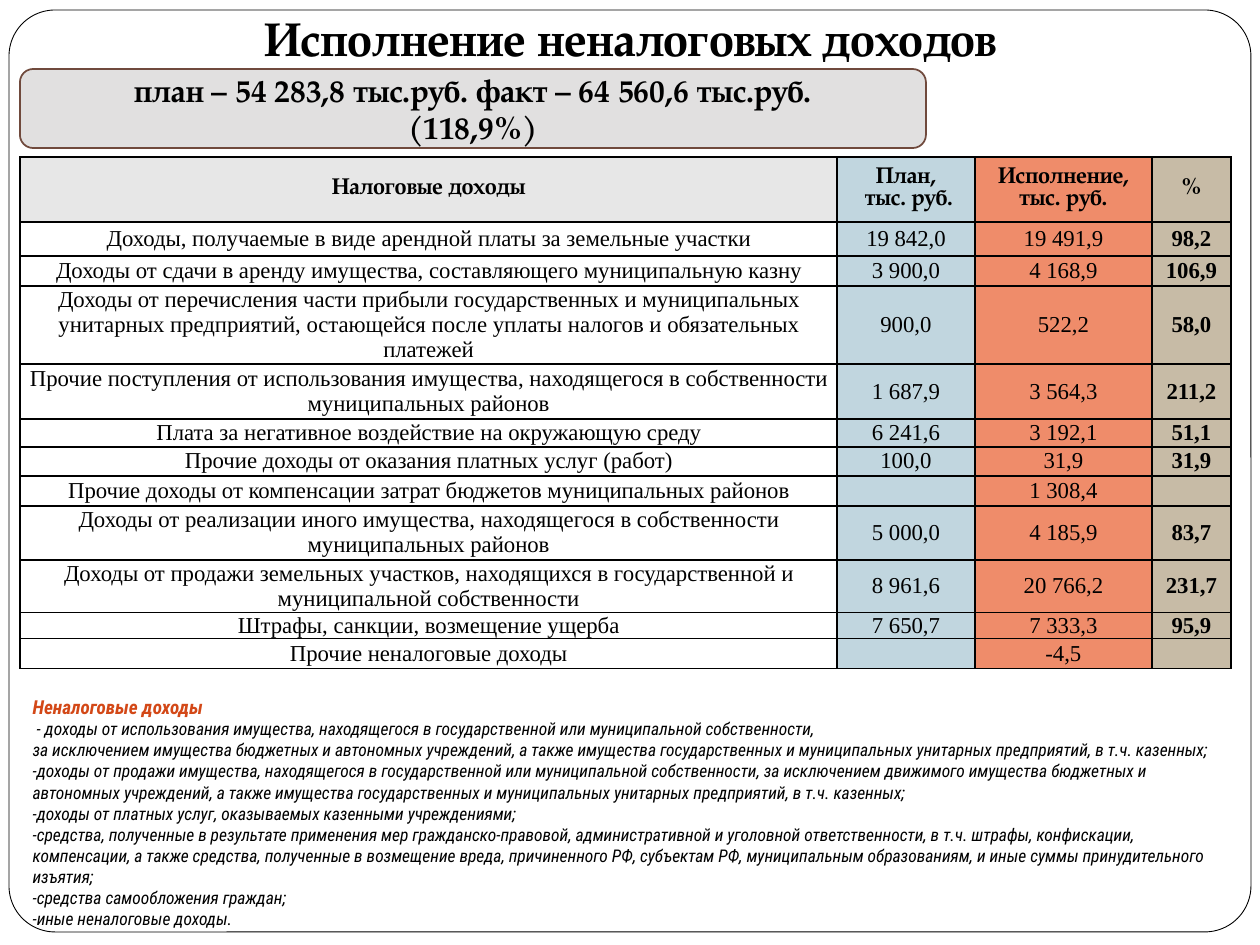
from dataclasses import dataclass

from lxml.etree import SubElement
from pptx import Presentation
from pptx.dml.color import RGBColor
from pptx.enum.shapes import MSO_SHAPE as Shape
from pptx.enum.text import MSO_ANCHOR as Anchor, MSO_AUTO_SIZE as AutoSize, PP_ALIGN as Align
from pptx.oxml.ns import qn
from pptx.util import Emu, Pt

EMU_PER_PX = 914400 / 126


def px(n):
    return Emu(round(n * EMU_PER_PX))


@dataclass(frozen=True)
class Theme:
    heading_font: str = "TeX Gyre Pagella"
    table_font: str = "Times New Roman"
    list_font: str = "Roboto Condensed"
    black: str = "000000"
    white: str = "FFFFFF"
    accent: str = "D34817"
    banner_fill: str = "E1E0E0"
    banner_line: str = "704A3D"
    header_fill: str = "E7E7E7"
    column_fills: tuple = ("FFFFFF", "C1D6DF", "EF8C6A", "C7BBA6")
    title_size: float = 27
    banner_size: float = 18
    table_size: float = 13
    list_heading_size: float = 11
    list_size: float = 10


class SlideBuilder:
    def __init__(self, prs, theme):
        self.theme = theme
        self.slide = prs.slides.add_slide(prs.slide_layouts[1])

    def place(self, sp, box):
        sp.left, sp.top, sp.width, sp.height = map(px, box)

    def style(self, p, font, size, color=None, bold=False, italic=False, align=Align.CENTER):
        p.alignment = align
        f = p.font
        f.name, f.size, f.bold, f.italic = font, Pt(size), bold, italic
        f.color.rgb = RGBColor.from_string(color or self.theme.black)

    def rounded(self, box, fill, line, width, radius=None):
        sp = self.slide.shapes.add_shape(Shape.ROUNDED_RECTANGLE, *map(px, box))
        sp.shadow.inherit = False
        sp.fill.solid()
        sp.fill.fore_color.rgb = RGBColor.from_string(fill)
        sp.line.color.rgb = RGBColor.from_string(line)
        sp.line.width = Pt(width)
        if radius is not None:
            sp.adjustments[0] = radius
        return sp

    def frame(self, box):
        sp = self.rounded(box, self.theme.white, self.theme.black, 0.5, 0.05)
        self.slide.shapes._spTree.insert(2, sp._element)  # behind everything

    def title(self, box, text):
        sp = self.slide.shapes.title
        self.place(sp, box)
        tf = sp.text_frame
        tf.text = text
        tf.auto_size, tf.vertical_anchor = AutoSize.NONE, Anchor.BOTTOM
        tf.margin_bottom = px(13)
        self.style(tf.paragraphs[0], self.theme.heading_font, self.theme.title_size, bold=True)

    def banner(self, box, text):
        sp = self.rounded(box, self.theme.banner_fill, self.theme.banner_line, 1)
        tf = sp.text_frame
        tf.text = text
        tf.word_wrap, tf.vertical_anchor = True, Anchor.MIDDLE
        for p in tf.paragraphs:
            self.style(p, self.theme.heading_font, self.theme.banner_size, bold=True)

    def cell_borders(self, cell):
        tc_pr = cell._tc.get_or_add_tcPr()
        for side in ("a:lnL", "a:lnR", "a:lnT", "a:lnB"):
            ln = SubElement(tc_pr, qn(side), w=str(Pt(1)))
            fill = SubElement(ln, qn("a:solidFill"))
            SubElement(fill, qn("a:srgbClr"), val=self.theme.black)

    def cell(self, cell, text, fill, font, bold, margins):
        cell.text = text
        cell.vertical_anchor = Anchor.MIDDLE
        cell.margin_left = cell.margin_right = px(margins[0])
        cell.margin_top = cell.margin_bottom = px(margins[1])
        self.cell_borders(cell)
        cell.fill.solid()
        cell.fill.fore_color.rgb = RGBColor.from_string(fill)
        for p in cell.text_frame.paragraphs:
            self.style(p, font, self.theme.table_size, bold=bold)
            if not text:  # keeps empty cells from stretching the row
                p._p.get_or_add_endParaRPr().set("sz", str(round(self.theme.table_size * 100)))

    def table(self, left, top, widths, heights, header, rows):
        t = self.theme
        box = (left, top, sum(widths), sum(heights))
        table = self.slide.shapes.add_table(len(heights), len(widths), *map(px, box)).table
        table.first_row = table.horz_banding = False
        for column, w in zip(table.columns, widths):
            column.width = px(w)
        for row, h in zip(table.rows, heights):
            row.height = px(h)
        header_fills = (t.header_fill, *t.column_fills[1:])
        for c, (text, fill) in enumerate(zip(header, header_fills)):
            self.cell(table.cell(0, c), text, fill, t.heading_font, True, (12, 4))
        last = len(widths) - 1
        for r, row in enumerate(rows, 1):
            for c, (text, fill) in enumerate(zip(row, t.column_fills)):
                self.cell(table.cell(r, c), text, fill, t.table_font, c == last, (1, 0))

    def text_list(self, box, heading, items):
        t = self.theme
        sp = self.slide.placeholders[1]
        self.place(sp, box)
        tf = sp.text_frame
        tf.text = "\n".join([heading, *items])
        tf.auto_size, tf.vertical_anchor = AutoSize.NONE, Anchor.TOP
        for i, p in enumerate(tf.paragraphs):
            size, color = (t.list_size, t.black) if i else (t.list_heading_size, t.accent)
            p.space_before = Pt(0)
            self.style(p, t.list_font, size, color, i == 0, True, Align.LEFT)
            p_pr = p._p.get_or_add_pPr()
            p_pr.set("marL", "0")
            p_pr.set("indent", "0")
            p_pr.insert(1, p_pr.makeelement(qn("a:buNone")))  # after spacing, before font


HEADER = ("Налоговые доходы", "План,\n тыс. руб.", "Исполнение, тыс. руб.", "%")
ROWS = [
    ("Доходы, получаемые в виде арендной платы за земельные участки",
     "19 842,0", "19 491,9", "98,2"),
    ("Доходы от сдачи в аренду имущества, составляющего муниципальную казну",
     "3 900,0", "4 168,9", "106,9"),
    ("Доходы от перечисления части прибыли государственных и муниципальных унитарных "
     "предприятий, остающейся после уплаты налогов и обязательных платежей",
     "900,0", "522,2", "58,0"),
    ("Прочие поступления от использования имущества, находящегося в собственности "
     "муниципальных районов", "1 687,9", "3 564,3", "211,2"),
    ("Плата за негативное воздействие на окружающую среду", "6 241,6", "3 192,1", "51,1"),
    ("Прочие доходы от оказания платных услуг (работ)", "100,0", "31,9", "31,9"),
    ("Прочие доходы от компенсации затрат бюджетов муниципальных районов", "", "1 308,4", ""),
    ("Доходы от реализации иного имущества, находящегося в собственности "
     "муниципальных районов", "5 000,0", "4 185,9", "83,7"),
    ("Доходы от продажи земельных участков, находящихся в государственной и "
     "муниципальной собственности", "8 961,6", "20 766,2", "231,7"),
    ("Штрафы, санкции, возмещение ущерба", "7 650,7", "7 333,3", "95,9"),
    ("Прочие неналоговые доходы", "", "-4,5", ""),
]
COLUMN_WIDTHS = (817, 138, 177, 79)
ROW_HEIGHTS = (65, 34, 30, 78, 55, 28, 29, 30, 54, 53, 26, 30)
DEFINITIONS = [
    " - доходы от использования имущества, находящегося в государственной или "
    "муниципальной собственности,",
    "за исключением имущества бюджетных и автономных учреждений, а также имущества "
    "государственных и муниципальных унитарных предприятий, в т.ч. казенных;",
    "-доходы от продажи имущества, находящегося в государственной или муниципальной "
    "собственности, за исключением движимого имущества бюджетных и автономных учреждений, "
    "а также имущества государственных и муниципальных унитарных предприятий, в т.ч. казенных;",
    "-доходы от платных услуг, оказываемых казенными учреждениями;",
    "-средства, полученные в результате применения мер гражданско-правовой, "
    "административной и уголовной ответственности, в т.ч. штрафы, конфискации, компенсации, "
    "а также средства, полученные в возмещение вреда, причиненного РФ, субъектам РФ, "
    "муниципальным образованиям, и иные суммы принудительного изъятия;",
    "-средства самообложения граждан;",
    "-иные неналоговые доходы.",
]


def main():
    prs = Presentation()
    prs.slide_width, prs.slide_height = px(1260), px(945)
    s = SlideBuilder(prs, Theme())

    # Frame and headings
    s.frame((9, 10, 1242, 922))
    s.title((74, 26, 1113, 53), "Исполнение неналоговых доходов")
    s.banner((20, 69, 906, 79),
             "план – 54 283,8 тыс.руб. факт – 64 560,6 тыс.руб.\n(118,9%)")

    # Income table
    s.table(20, 157, COLUMN_WIDTHS, ROW_HEIGHTS, HEADER, ROWS)

    # Explanatory list
    s.text_list((20, 689, 1221, 240), "Неналоговые доходы", DEFINITIONS)

    prs.save("out.pptx")


if __name__ == "__main__":
    main()
